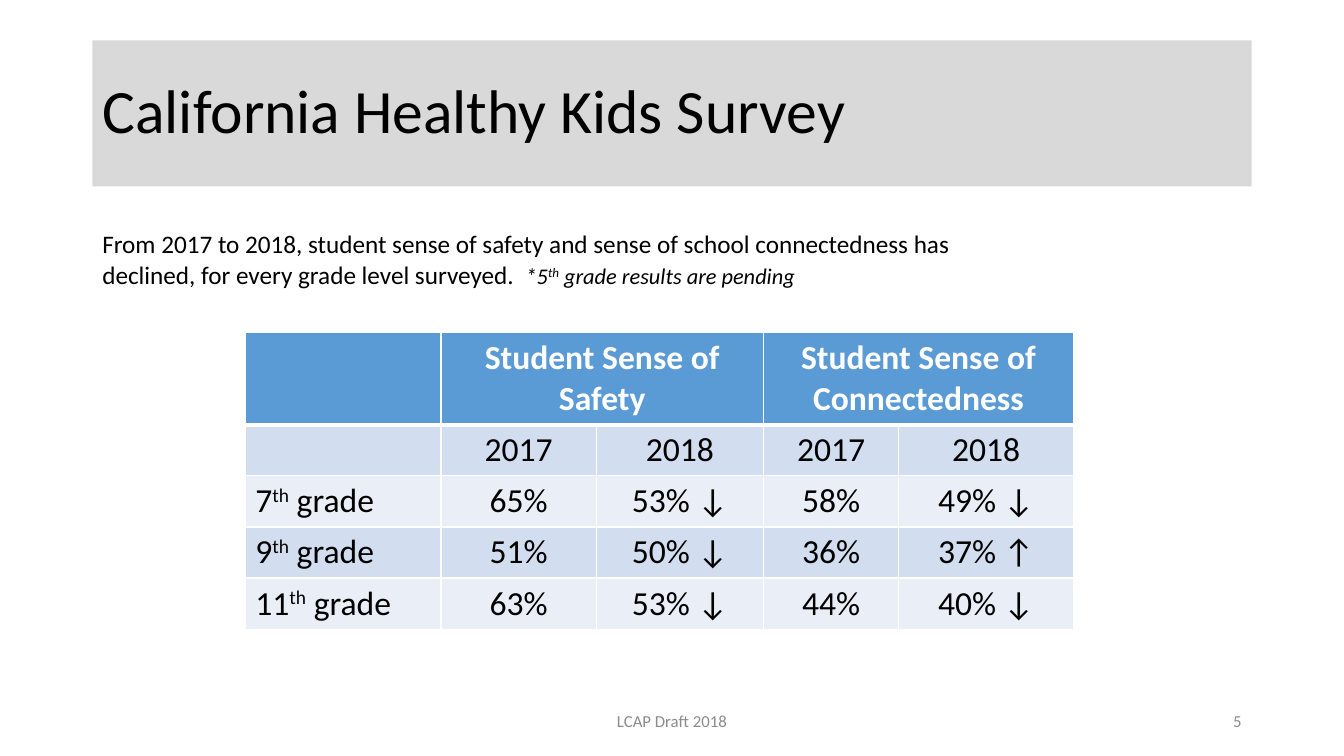
from dataclasses import dataclass

from lxml.etree import SubElement
from pptx import Presentation
from pptx.dml.color import RGBColor
from pptx.enum.text import MSO_ANCHOR, MSO_AUTO_SIZE, PP_ALIGN
from pptx.oxml.ns import qn
from pptx.util import Inches, Pt

FONT = "Calibri"
BLACK, WHITE, GRAY = "000000", "FFFFFF", "8C8C8C"
BLUE, BANDS = "5B9BD5", ("D2DEEF", "EAEFF7")

# Slide grid: 160 columns by 150 rows
WIDE, HIGH = Inches(13.333), Inches(7.5)
COLS, ROWS = 160, 150


@dataclass
class Area:
    col: float
    row: float
    cols: float
    rows: float

    def box(self) -> tuple[int, int, int, int]:
        return across(self.col), down(self.row), across(self.cols), down(self.rows)


@dataclass
class Run:
    text: str
    size: float
    color: str = BLACK
    bold: bool = False
    slant: bool = False
    raised: bool = False


@dataclass
class Note:
    area: Area
    runs: list[Run]
    align: PP_ALIGN = PP_ALIGN.LEFT
    anchor: MSO_ANCHOR = MSO_ANCHOR.MIDDLE


def across(cols: float) -> int:
    return round(WIDE * cols / COLS)


def down(rows: float) -> int:
    return round(HIGH * rows / ROWS)


def tint(code: str) -> RGBColor:
    return RGBColor.from_string(code)


def write(frame, runs: list[Run], align: PP_ALIGN) -> None:
    para = frame.paragraphs[0]
    para.alignment = align
    for item in runs:
        run = para.add_run()
        run.text = item.text
        font = run.font
        font.name, font.size = FONT, Pt(item.size)
        font.bold, font.italic = item.bold, item.slant
        font.color.rgb = tint(item.color)
        if item.raised:
            font._element.set("baseline", "30000")


def add_note(slide, note: Note) -> None:
    frame = slide.shapes.add_textbox(*note.area.box()).text_frame
    frame.word_wrap = True
    frame.vertical_anchor = note.anchor
    write(frame, note.runs, note.align)


def edge(cell, base: float) -> None:
    props = cell._tc.get_or_add_tcPr()
    widths = {"a:lnL": 1, "a:lnR": 1, "a:lnT": 1, "a:lnB": base}
    for spot, (tag, width) in enumerate(widths.items()):
        line = SubElement(props, qn(tag), w=str(Pt(width)))
        fill = SubElement(line, qn("a:solidFill"))
        SubElement(fill, qn("a:srgbClr"), val=WHITE)
        props.insert(spot, line)


def paint(cell, color: str, base: float = 1) -> None:
    cell.fill.solid()
    cell.fill.fore_color.rgb = tint(color)
    edge(cell, base)


# Survey results
HEADS = {1: "Student Sense of Safety", 3: "Student Sense of Connectedness"}
YEARS = ["2017", "2018", "2017", "2018"]
GRADES = {
    "7": ["65%", "53% ↓", "58%", "49% ↓"],
    "9": ["51%", "50% ↓", "36%", "37% ↑"],
    "11": ["63%", "53% ↓", "44%", "40% ↓"],
}
SPANS = [23.3, 18.5, 19.9, 16.1, 20.8]
TALL, SHORT = 17.8, 10.1
TEXT = 24


def ordinal(number: str, tail: str, size: float, slant: bool = False) -> list[Run]:
    return [
        Run(number, size, slant=slant),
        Run("th", size, slant=slant, raised=True),
        Run(tail, size, slant=slant),
    ]


def add_survey(slide) -> None:
    heights = [TALL] + [SHORT] * (1 + len(GRADES))
    area = Area(29.2, 66, sum(SPANS), sum(heights))
    table = slide.shapes.add_table(len(heights), len(SPANS), *area.box()).table
    for col, span in zip(table.columns, SPANS):
        col.width = across(span)
    for row, height in zip(table.rows, heights):
        row.height = down(height)

    # Header with two merged heads
    for col in range(len(SPANS)):
        paint(table.cell(0, col), BLUE, 3)
    for col, head in HEADS.items():
        cell = table.cell(0, col)
        cell.merge(table.cell(0, col + 1))
        write(cell.text_frame, [Run(head, TEXT, WHITE, bold=True)], PP_ALIGN.CENTER)

    # Banded body
    labels = [[]] + [ordinal(grade, " grade", TEXT) for grade in GRADES]
    body = [YEARS, *GRADES.values()]
    for row, (label, values) in enumerate(zip(labels, body), 1):
        texts = [label] + [[Run(value, TEXT)] for value in values]
        for col, runs in enumerate(texts):
            cell = table.cell(row, col)
            paint(cell, BANDS[(row - 1) % 2])
            write(cell.text_frame, runs, PP_ALIGN.CENTER if col else PP_ALIGN.LEFT)


def add_title(slide) -> None:
    title = slide.shapes.title
    title.left, title.top, title.width, title.height = Area(11, 8, 138, 29).box()
    title.fill.solid()
    title.fill.fore_color.rgb = tint("D9D9D9")
    frame = title.text_frame
    frame.auto_size = MSO_AUTO_SIZE.NONE
    frame.vertical_anchor = MSO_ANCHOR.MIDDLE
    write(frame, [Run("California Healthy Kids Survey", 44)], PP_ALIGN.LEFT)
    frame.paragraphs[0].line_spacing = 0.9


INTRO = (
    "From 2017 to 2018, student sense of safety and sense of school connectedness "
    "has declined, for every grade level surveyed.  "
)
NOTES = [
    Note(Area(53, 139, 54, 8), [Run("LCAP Draft 2018", 12, GRAY)], PP_ALIGN.CENTER),
    Note(Area(113, 139, 36, 8), [Run("5", 12, GRAY)], PP_ALIGN.RIGHT),
    Note(
        Area(11, 44.4, 114, 14.2),
        [Run(INTRO, 18), *ordinal("*5", " grade results are pending", 16, True)],
        anchor=MSO_ANCHOR.TOP,
    ),
]


def main() -> None:
    deck = Presentation()
    deck.slide_width, deck.slide_height = WIDE, HIGH
    slide = deck.slides.add_slide(deck.slide_layouts[5])
    add_title(slide)
    add_survey(slide)
    for note in NOTES:
        add_note(slide, note)
    deck.save("out.pptx")


if __name__ == "__main__":
    main()
